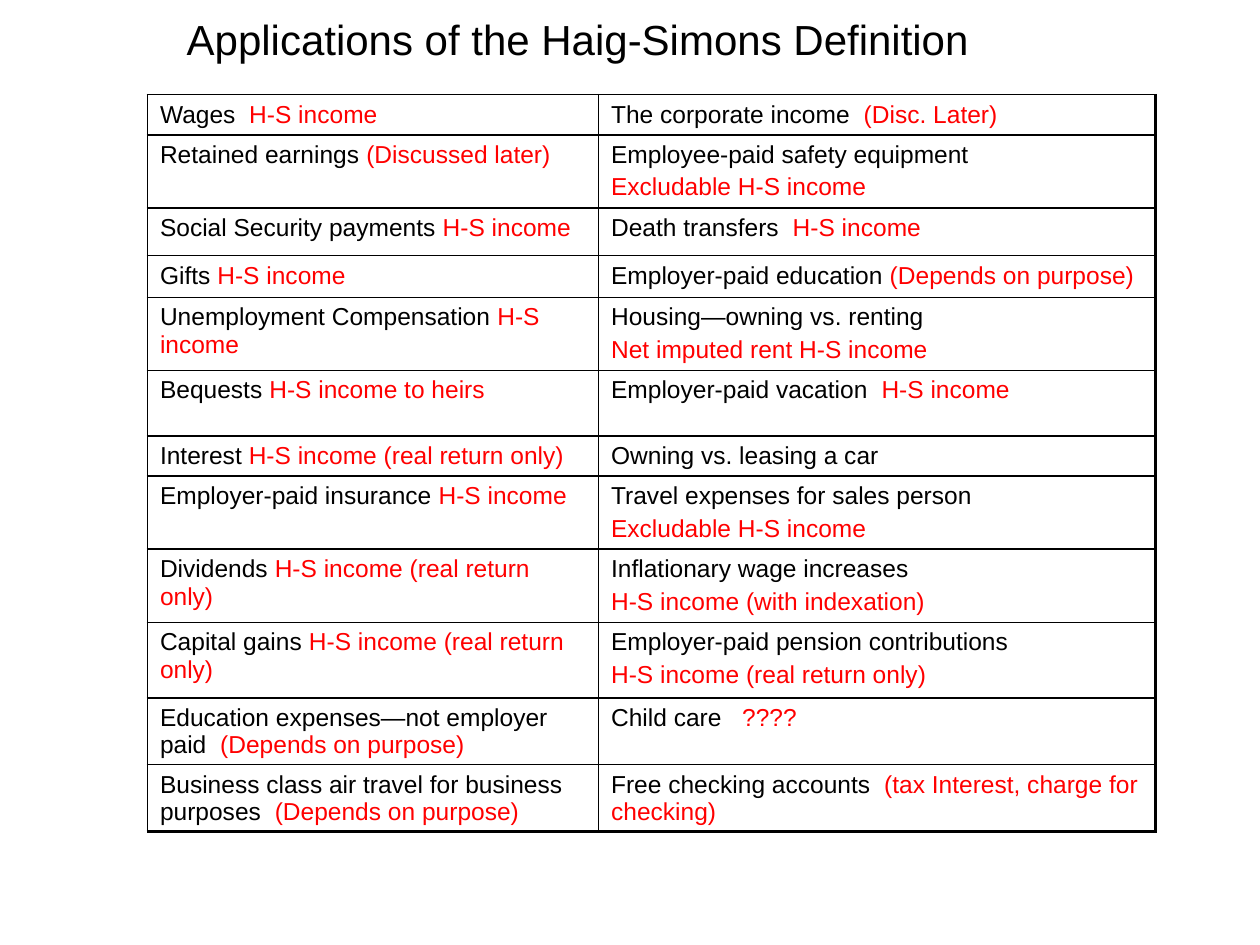
from pptx import Presentation
from pptx.dml.color import RGBColor
from pptx.enum.text import MSO_ANCHOR, PP_ALIGN
from pptx.oxml import parse_xml
from pptx.oxml.ns import nsdecls
from pptx.util import Inches, Pt

BLACK = RGBColor(0x00, 0x00, 0x00)
RED = RGBColor(0xFF, 0x00, 0x00)
FONT = "Arial"
THIN, THICK = 1, 2.25

COLUMN_WIDTHS = (3.58, 4.42)
# Each row: height, left paragraphs, right paragraphs.
# A paragraph is an (item, verdict) pair; the verdict is red.
ROWS = [
    (0.32, [("Wages  ", "H-S income")],
     [("The corporate income  ", "(Disc. Later)")]),
    (0.58, [("Retained earnings ", "(Discussed later)")],
     [("Employee-paid safety equipment", ""), ("", "Excludable H-S income")]),
    (0.38, [("Social Security payments ", "H-S income")],
     [("Death transfers  ", "H-S income")]),
    (0.33, [("Gifts ", "H-S income")],
     [("Employer-paid education ", "(Depends on purpose)")]),
    (0.58, [("Unemployment Compensation ", "H-S income")],
     [("Housing—owning vs. renting", ""), ("", "Net imputed rent H-S income")]),
    (0.52, [("Bequests ", "H-S income to heirs")],
     [("Employer-paid vacation  ", "H-S income")]),
    (0.32, [("Interest ", "H-S income (real return only)")],
     [("Owning vs. leasing a car", "")]),
    (0.58, [("Employer-paid insurance ", "H-S income")],
     [("Travel expenses for sales person", ""), ("", "Excludable H-S income")]),
    (0.58, [("Dividends ", "H-S income (real return only)")],
     [("Inflationary wage increases", ""), ("", "H-S income (with indexation)")]),
    (0.6, [("Capital gains ", "H-S income (real return only)")],
     [("Employer-paid pension contributions", ""),
      ("", "H-S income (real return only)")]),
    (0.53, [("Education expenses—not employer paid  ", "(Depends on purpose)")],
     [("Child care   ", "????")]),
    (0.53, [("Business class air travel for business purposes  ",
             "(Depends on purpose)")],
     [("Free checking accounts ", " (tax Interest, charge for checking)")]),
]


def add_span(para, text, size=14, color=BLACK):
    span = para.add_run()
    span.text = text
    span.font.name = FONT
    span.font.size = Pt(size)
    span.font.color.rgb = color


def add_title(page, text, left, top, width, height):
    box = page.shapes.add_textbox(Inches(left), Inches(top),
                                  Inches(width), Inches(height))
    frame = box.text_frame
    frame.word_wrap = True
    frame.vertical_anchor = MSO_ANCHOR.MIDDLE
    para = frame.paragraphs[0]
    para.alignment = PP_ALIGN.CENTER
    add_span(para, text, size=24)


def set_borders(cell, **widths):
    """Draw black borders; widths maps L, R, T and B to points."""
    properties = cell._tc.get_or_add_tcPr()
    for position, side in enumerate("LRTB"):
        border = parse_xml(
            f'<a:ln{side} {nsdecls("a")} w="{Pt(widths[side])}">'
            f'<a:solidFill><a:srgbClr val="{BLACK}"/></a:solidFill></a:ln{side}>')
        properties.insert(position, border)


def fill_cell(cell, paragraphs):
    frame = cell.text_frame
    cell.margin_bottom = Inches(0.01)
    for index, (item, verdict) in enumerate(paragraphs):
        para = frame.add_paragraph() if index else frame.paragraphs[0]
        if index:
            para.space_before = Pt(2.8)
        for text, color in ((item, BLACK), (verdict, RED)):
            if text:
                add_span(para, text, color=color)


def add_income_table(page, left, top):
    heights = [row[0] for row in ROWS]
    table = page.shapes.add_table(
        len(ROWS), len(COLUMN_WIDTHS), Inches(left), Inches(top),
        Inches(sum(COLUMN_WIDTHS)), Inches(sum(heights))).table
    table.first_row = False
    table.horz_banding = False
    for column, width in zip(table.columns, COLUMN_WIDTHS):
        column.width = Inches(width)
    for row_index, (height, *contents) in enumerate(ROWS):
        table.rows[row_index].height = Inches(height)
        for column_index, paragraphs in enumerate(contents):
            cell = table.cell(row_index, column_index)
            cell.fill.background()
            fill_cell(cell, paragraphs)
            last_column = column_index == len(COLUMN_WIDTHS) - 1
            last_row = row_index == len(ROWS) - 1
            set_borders(cell, L=THIN, T=THIN,
                        R=THICK if last_column else THIN,
                        B=THICK if last_row else THIN)


def main():
    deck = Presentation()
    deck.slide_width, deck.slide_height = Inches(10), Inches(7.5)
    page = deck.slides.add_slide(deck.slide_layouts[6])
    add_title(page, "Applications of the Haig-Simons Definition",
              0.5, 0.06, 8.17, 0.5)
    add_income_table(page, 1.17, 0.75)
    deck.save("out.pptx")


if __name__ == "__main__":
    main()
